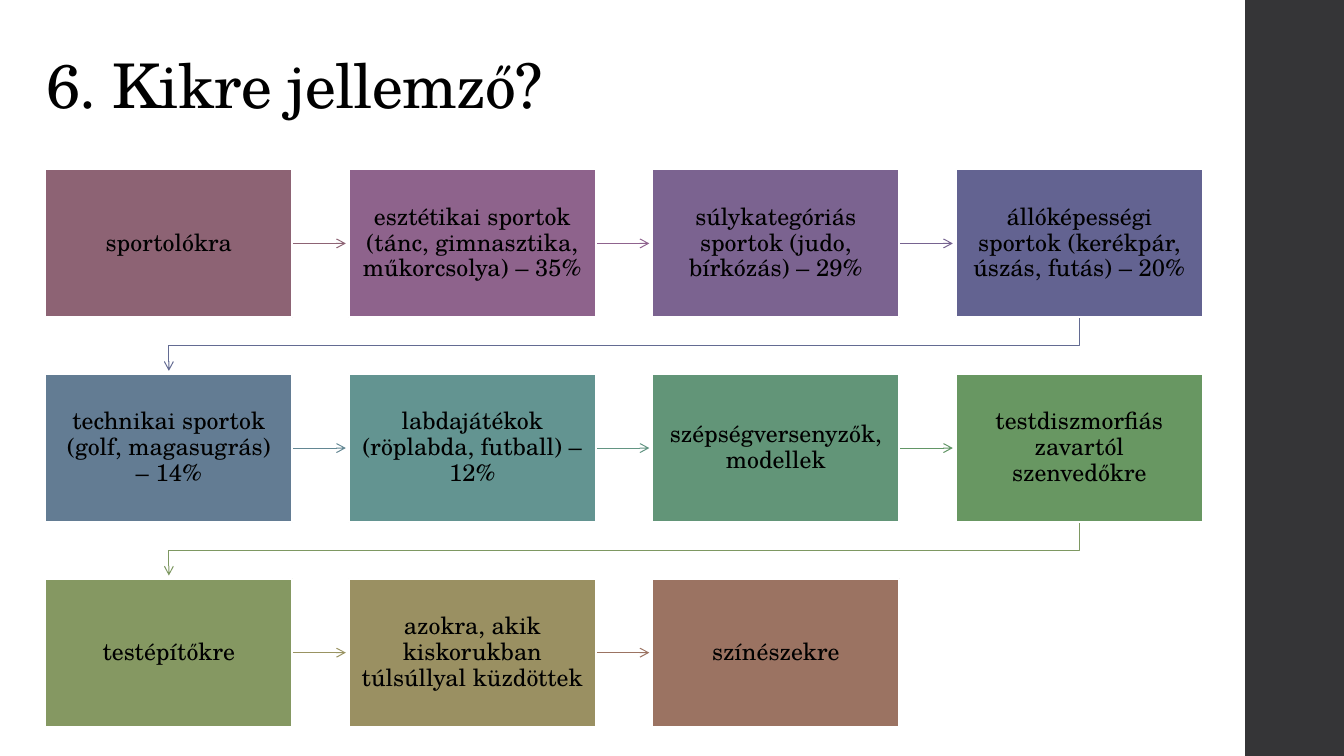
from lxml import etree
from pptx import Presentation
from pptx.dml.color import RGBColor
from pptx.enum.shapes import MSO_CONNECTOR, MSO_SHAPE
from pptx.enum.text import MSO_ANCHOR, PP_ALIGN
from pptx.oxml.ns import qn
from pptx.util import Inches, Pt

RECTANGLE = MSO_SHAPE.RECTANGLE
STRAIGHT = MSO_CONNECTOR.STRAIGHT
MIDDLE, BOTTOM = MSO_ANCHOR.MIDDLE, MSO_ANCHOR.BOTTOM
CENTER, LEFT = PP_ALIGN.CENTER, PP_ALIGN.LEFT

FONT = "TeX Gyre Schola"
BLACK = RGBColor(0x00, 0x00, 0x00)
WHITE = RGBColor(0xFF, 0xFF, 0xFF)
CHARCOAL = RGBColor(0x35, 0x35, 0x37)

SLIDE_WIDTH, SLIDE_HEIGHT = 13.33, 7.5
COLUMNS = 4
COLUMN_STEP, ROW_STEP = 3.01, 2.03
BOX_WIDTH, BOX_HEIGHT = 2.45, 1.47
ARROW_LENGTH = 0.53
BEND_DROP = 0.28

STEPS = [
    ("sportolókra", RGBColor(0x8D, 0x63, 0x74), RGBColor(0x8D, 0x63, 0x74)),
    ("esztétikai sportok (tánc, gimnasztika, műkorcsolya) – 35%",
     RGBColor(0x8E, 0x63, 0x8C), RGBColor(0x8F, 0x63, 0x8E)),
    ("súlykategóriás sportok (judo, bírkózás) – 29%",
     RGBColor(0x7B, 0x63, 0x90), RGBColor(0x76, 0x63, 0x90)),
    ("állóképességi sportok (kerékpár, úszás, futás) – 20%",
     RGBColor(0x63, 0x63, 0x91), RGBColor(0x63, 0x6B, 0x92)),
    ("technikai sportok (golf, magasugrás) – 14%",
     RGBColor(0x63, 0x7C, 0x93), RGBColor(0x63, 0x87, 0x93)),
    ("labdajátékok (röplabda, futball) – 12%",
     RGBColor(0x63, 0x94, 0x91), RGBColor(0x63, 0x95, 0x83)),
    ("szépségversenyzők, modellek",
     RGBColor(0x62, 0x95, 0x78), RGBColor(0x62, 0x96, 0x66)),
    ("testdiszmorfiás zavartól szenvedőkre",
     RGBColor(0x68, 0x97, 0x62), RGBColor(0x7E, 0x98, 0x62)),
    ("testépítőkre", RGBColor(0x85, 0x98, 0x62), RGBColor(0x99, 0x93, 0x62)),
    ("azokra, akik kiskorukban túlsúllyal küzdöttek",
     RGBColor(0x9A, 0x90, 0x62), RGBColor(0x9B, 0x73, 0x62)),
    ("színészekre", RGBColor(0x9B, 0x73, 0x62), None),
]


def write_text(shape, text, size, alignment, anchor):
    """Put one styled paragraph into a shape and return it."""
    frame = shape.text_frame
    frame.word_wrap = True
    frame.vertical_anchor = anchor
    paragraph = frame.paragraphs[0]
    paragraph.text = text
    paragraph.alignment = alignment
    paragraph.line_spacing = 0.9
    paragraph.font.name = FONT
    paragraph.font.size = Pt(size)
    paragraph.font.color.rgb = BLACK
    return paragraph


def add_rectangle(slide, left, top, width, height, color):
    """Add a flat filled rectangle without an outline."""
    shape = slide.shapes.add_shape(
        RECTANGLE, Inches(left), Inches(top), Inches(width), Inches(height))
    shape.shadow.inherit = False
    shape.fill.solid()
    shape.fill.fore_color.rgb = color
    shape.line.fill.background()
    return shape


def style_arrow(shape, color):
    """Give a line its colour, an open arrowhead and no shadow."""
    shape.line.color.rgb = color
    shape.line.width = Pt(0.75)
    properties = shape._element.spPr
    outline = properties.find(qn("a:ln"))
    etree.SubElement(outline, qn("a:tailEnd"), type="arrow")
    etree.SubElement(properties, qn("a:effectLst"))


def add_arrow_right(slide, left, top, color):
    """Add the arrow from a box to its right neighbour."""
    start = left + BOX_WIDTH
    middle = Inches(top + BOX_HEIGHT / 2)
    arrow = slide.shapes.add_connector(
        STRAIGHT, Inches(start), middle, Inches(start + ARROW_LENGTH), middle)
    style_arrow(arrow, color)


def add_arrow_to_next_row(slide, left, top, first_left, color):
    """Add the bent arrow from the last box of a row to the next row."""
    start_x, end_x = left + BOX_WIDTH / 2, first_left + BOX_WIDTH / 2
    start_y = top + BOX_HEIGHT
    bend_y, end_y = start_y + BEND_DROP, start_y + ARROW_LENGTH
    builder = slide.shapes.build_freeform(Inches(start_x), Inches(start_y))
    corners = [(start_x, bend_y), (end_x, bend_y), (end_x, end_y)]
    builder.add_line_segments(
        [(Inches(x), Inches(y)) for x, y in corners], close=False)
    arrow = builder.convert_to_shape()
    arrow.fill.background()
    style_arrow(arrow, color)


def add_step(slide, left, top, text, color):
    """Add one coloured box with its centred label."""
    box = add_rectangle(slide, left, top, BOX_WIDTH, BOX_HEIGHT, color)
    box.line.color.rgb = WHITE
    box.line.width = Pt(1.35)
    frame = box.text_frame
    frame.margin_left = frame.margin_right = Inches(0.12)
    frame.margin_top = frame.margin_bottom = Inches(0.13)
    write_text(box, text, 17, CENTER, MIDDLE)


def add_process(slide, left, top):
    """Lay the steps out row by row, each joined to the next."""
    for index, (text, fill_color, arrow_color) in enumerate(STEPS):
        row, column = divmod(index, COLUMNS)
        box_left = left + column * COLUMN_STEP
        box_top = top + row * ROW_STEP
        if arrow_color is not None:
            if column == COLUMNS - 1:
                add_arrow_to_next_row(slide, box_left, box_top, left, arrow_color)
            else:
                add_arrow_right(slide, box_left, box_top, arrow_color)
        add_step(slide, box_left, box_top, text, fill_color)


def add_title(slide, left, top, width, height):
    """Add the heading, resting on the bottom of its box."""
    title = slide.shapes.add_textbox(
        Inches(left), Inches(top), Inches(width), Inches(height))
    paragraph = write_text(title, "6. Kikre jellemző?", 44, LEFT, BOTTOM)
    paragraph.runs[0].font._element.set("spc", "-50")


def main():
    """Build and save the presentation."""
    presentation = Presentation()
    presentation.slide_width = Inches(SLIDE_WIDTH)
    presentation.slide_height = Inches(SLIDE_HEIGHT)
    slide = presentation.slides.add_slide(presentation.slide_layouts[6])
    add_rectangle(slide, 12.35, 0, 1, SLIDE_HEIGHT, CHARCOAL)
    add_title(slide, 0.36, 0, 10.78, 1.26)
    add_process(slide, 0.45, 1.68)
    presentation.save("out.pptx")


if __name__ == "__main__":
    main()
